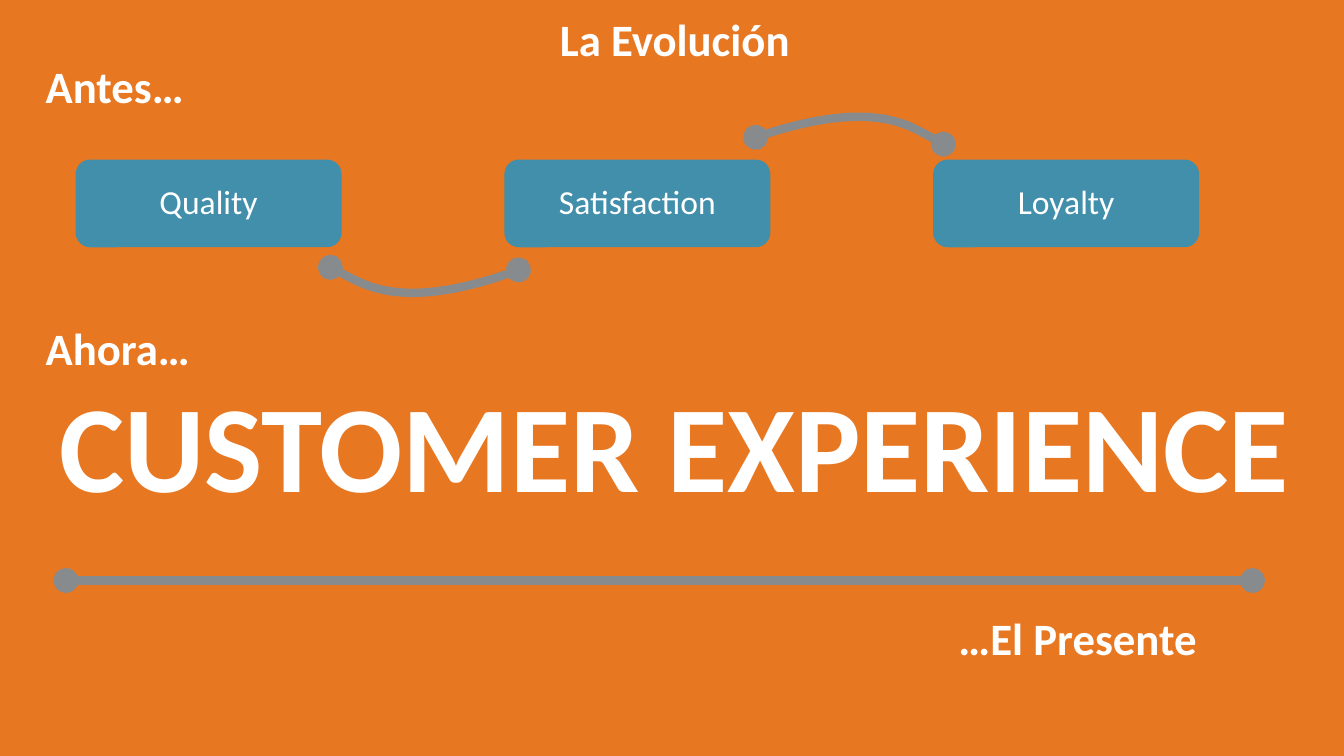
from lxml.etree import SubElement
from pptx import Presentation
from pptx.dml.color import RGBColor
from pptx.enum.shapes import MSO_CONNECTOR, MSO_SHAPE
from pptx.enum.text import MSO_ANCHOR, MSO_AUTO_SIZE, PP_ALIGN
from pptx.oxml.ns import qn
from pptx.util import Pt

COLORS = {"background": "E87722", "box": "418FAB", "line": "888B8D", "text": "FFFFFF"}


def write_text(shape, text, size, bold, align):
    frame = shape.text_frame
    frame_format = {"word_wrap": True, "auto_size": MSO_AUTO_SIZE.NONE,
                    "vertical_anchor": MSO_ANCHOR.MIDDLE, "margin_left": 0,
                    "margin_top": 0, "margin_right": 0, "margin_bottom": 0}
    for name, value in frame_format.items():
        setattr(frame, name, value)
    para = frame.paragraphs[0]
    para_format = {"alignment": align, "line_spacing": 0.9, "space_before": Pt(0)}
    for name, value in para_format.items():
        setattr(para, name, value)
    span = para.add_run()
    span.text = text
    font_format = {"name": "Calibri", "size": Pt(size), "bold": bold}
    for name, value in font_format.items():
        setattr(span.font, name, value)
    span.font.color.rgb = RGBColor.from_string(COLORS["text"])


def style_line(shape):
    shape.line.color.rgb = RGBColor.from_string(COLORS["line"])
    shape.line.width = Pt(4.5)
    outline = shape.line._get_or_add_ln()
    for end in ("a:headEnd", "a:tailEnd"):
        SubElement(outline, qn(end), type="oval")


deck = Presentation()
deck.slide_width, deck.slide_height = Pt(720), Pt(405)
page = deck.slides.add_slide(deck.slide_layouts[5])
page.background.fill.solid()
page.background.fill.fore_color.rgb = RGBColor.from_string(COLORS["background"])

title = page.shapes.title
title_place = {"left": 24.5, "top": 207.4, "width": 674, "height": 70}
for name, value in title_place.items():
    setattr(title, name, Pt(value))
write_text(title, "CUSTOMER EXPERIENCE", 66, True, PP_ALIGN.CENTER)

for index, stage in enumerate(("Quality", "Satisfaction", "Loyalty")):
    box = page.shapes.add_shape(MSO_SHAPE.ROUNDED_RECTANGLE,
                                Pt(40.5 + index * 229.7), Pt(85.5), Pt(142.5), Pt(47))
    box.shadow.inherit = False
    box.fill.solid()
    box.fill.fore_color.rgb = RGBColor.from_string(COLORS["box"])
    box.line.fill.background()
    write_text(box, stage, 18, False, PP_ALIGN.CENTER)

curves = [
    ((177, 143.2), (215.3, 168.5), (277.8, 144.6)),
    ((505.4, 77.2), (468, 51.1), (404.8, 73.6)),
]
for start, control, end in curves:
    builder = page.shapes.build_freeform(Pt(start[0]), Pt(start[1]))
    builder.add_line_segments([(Pt(x), Pt(y)) for x, y in (start, control, end)], close=False)
    curve = builder.convert_to_shape()
    curve.shadow.inherit = False
    curve.fill.background()
    outline_path = curve._element.find(".//" + qn("a:path"))
    segments = outline_path.findall(qn("a:lnTo"))
    bezier = SubElement(outline_path, qn("a:cubicBezTo"))
    for segment in segments:
        bezier.append(segment[0])
        outline_path.remove(segment)
    style_line(curve)

timeline = page.shapes.add_connector(MSO_CONNECTOR.STRAIGHT,
                                     Pt(35.3), Pt(311), Pt(671), Pt(311))
style_line(timeline)
SubElement(timeline._element.spPr, qn("a:effectLst"))

labels = [
    ("La Evolución", 24.5, 9.4, 674, PP_ALIGN.CENTER),
    ("Antes…", 24.5, 34.9, 674, PP_ALIGN.LEFT),
    ("Ahora…", 24.5, 175, 87, PP_ALIGN.LEFT),
    ("…El Presente", 513.5, 330.5, 169, PP_ALIGN.LEFT),
]
for text, left, top, width, align in labels:
    label = page.shapes.add_textbox(Pt(left), Pt(top), Pt(width), Pt(26))
    write_text(label, text, 24, True, align)

deck.save("out.pptx")
